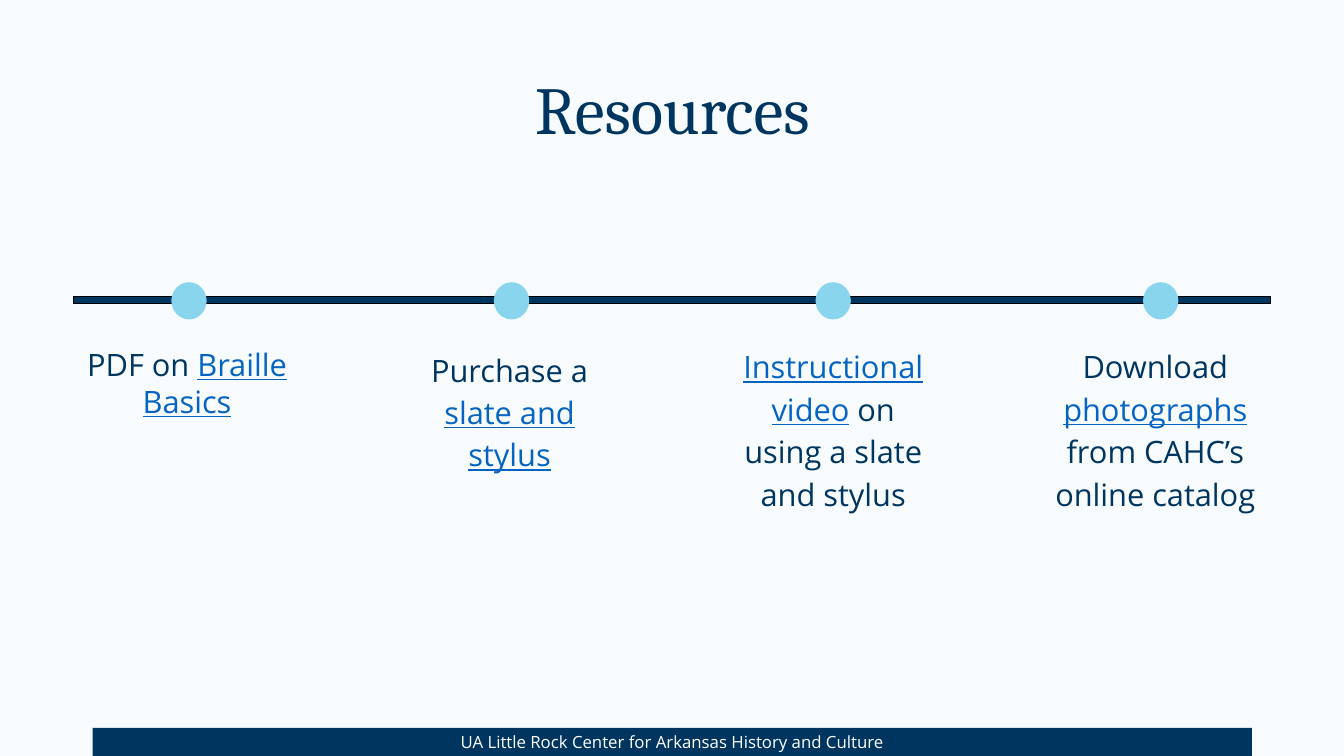
"""Build the Resources timeline slide."""
from pptx import Presentation
from pptx import util as u
from pptx.dml.color import RGBColor
from pptx.enum import shapes, text

COLOURS = {"paper": "F8FBFE", "navy": "00355F", "sky": "8AD5EE",
           "link": "0563C1", "white": "FFFFFF", "black": "000000"}
WIDTH, HEIGHT = u.Inches(13.33), u.Inches(7.5)
BODY_FONT, TITLE_FONT = "Open Sans", "Cambria"
DOT_TOP, DOT_WIDTH, DOT_HEIGHT = 37.33, 2.63, 4.93

# Each step: dot left, text box, line spacing, space after, (wording, is link) runs
STEPS = [
    (12.75, (5.7, 45.07, 16.43, 11.2), 1.0, 0,
     [("PDF on ", False), ("Braille Basics", True)]),
    (36.75, (29.7, 45.07, 16.43, 17.6), 1.15, 12,
     [("Purchase a ", False), ("slate and stylus", True)]),
    (60.68, (53.78, 44.67, 16.43, 23.33), 1.15, 12,
     [("Instructional video", True), (" on using a slate and stylus", False)]),
    (85.05, (77.33, 44.67, 17.25, 23.33), 1.15, 12,
     [("Download ", False), ("photographs", True),
      (" from CAHC’s online catalog", False)]),
]


def colour(name):
    """Return the named colour."""
    return RGBColor.from_string(COLOURS[name])


def area(left, top, width, height):
    """Turn percentages of the slide into lengths."""
    return (int(WIDTH * left / 100), int(HEIGHT * top / 100),
            int(WIDTH * width / 100), int(HEIGHT * height / 100))


def add_run(paragraph, wording, size, tint, font=BODY_FONT, underline=None):
    """Add one formatted run to a paragraph."""
    run = paragraph.add_run()
    run.text = wording
    run.font.size = u.Pt(size)
    run.font.name = font
    run.font.color.rgb = colour(tint)
    run.font.underline = underline


def add_title(slide, wording):
    """Place and format the slide title."""
    title = slide.shapes.title
    title.left, title.top, title.width, title.height = area(6.9, 5.2, 86.25, 19.33)
    title.text_frame.vertical_anchor = text.MSO_ANCHOR.MIDDLE
    heading = title.text_frame.paragraphs[0]
    heading.alignment = text.PP_ALIGN.CENTER
    heading.line_spacing = 0.9
    add_run(heading, wording, 48, "navy", TITLE_FONT)


def add_block(slide, kind, place, fill, outline=None):
    """Add a flat shape, outlined only when a colour is given."""
    block = slide.shapes.add_shape(kind, *area(*place))
    block.shadow.inherit = False
    block.fill.solid()
    block.fill.fore_color.rgb = colour(fill)
    if outline:
        block.line.color.rgb = colour(outline)
        block.line.width = u.Pt(0.75)
    else:
        block.line.fill.background()
    return block


def add_step(slide, dot_left, place, spacing, after, wording):
    """Add a timeline dot and the resource described below it."""
    add_block(slide, shapes.MSO_SHAPE.OVAL,
              (dot_left, DOT_TOP, DOT_WIDTH, DOT_HEIGHT), "sky")
    frame = slide.shapes.add_textbox(*area(*place)).text_frame
    frame.word_wrap = True
    frame.auto_size = text.MSO_AUTO_SIZE.SHAPE_TO_FIT_TEXT
    resource = frame.paragraphs[0]
    resource.alignment = text.PP_ALIGN.CENTER
    resource.line_spacing = spacing
    resource.space_after = u.Pt(after)
    for words, is_link in wording:
        add_run(resource, words, 22, "link" if is_link else "navy",
                underline=is_link or None)


def add_footer(slide, wording):
    """Add the band with the centre's name at the bottom."""
    band = add_block(slide, shapes.MSO_SHAPE.RECTANGLE,
                     (6.9, 96.27, 86.25, 3.73), "navy")
    band.text_frame.vertical_anchor = text.MSO_ANCHOR.MIDDLE
    centre_name = band.text_frame.paragraphs[0]
    centre_name.alignment = text.PP_ALIGN.CENTER
    add_run(centre_name, wording, 12, "white")


def main():
    """Build and save the slide."""
    deck = Presentation()
    deck.slide_width, deck.slide_height = WIDTH, HEIGHT
    slide = deck.slides.add_slide(deck.slide_layouts[5])
    slide.background.fill.solid()
    slide.background.fill.fore_color.rgb = colour("paper")
    add_title(slide, "Resources")
    add_block(slide, shapes.MSO_SHAPE.RECTANGLE,
              (5.48, 39.2, 89.02, 0.93), "navy", "black")
    for step in STEPS:
        add_step(slide, *step)
    add_footer(slide, "UA Little Rock Center for Arkansas History and Culture")
    deck.save("out.pptx")


if __name__ == "__main__":
    main()
